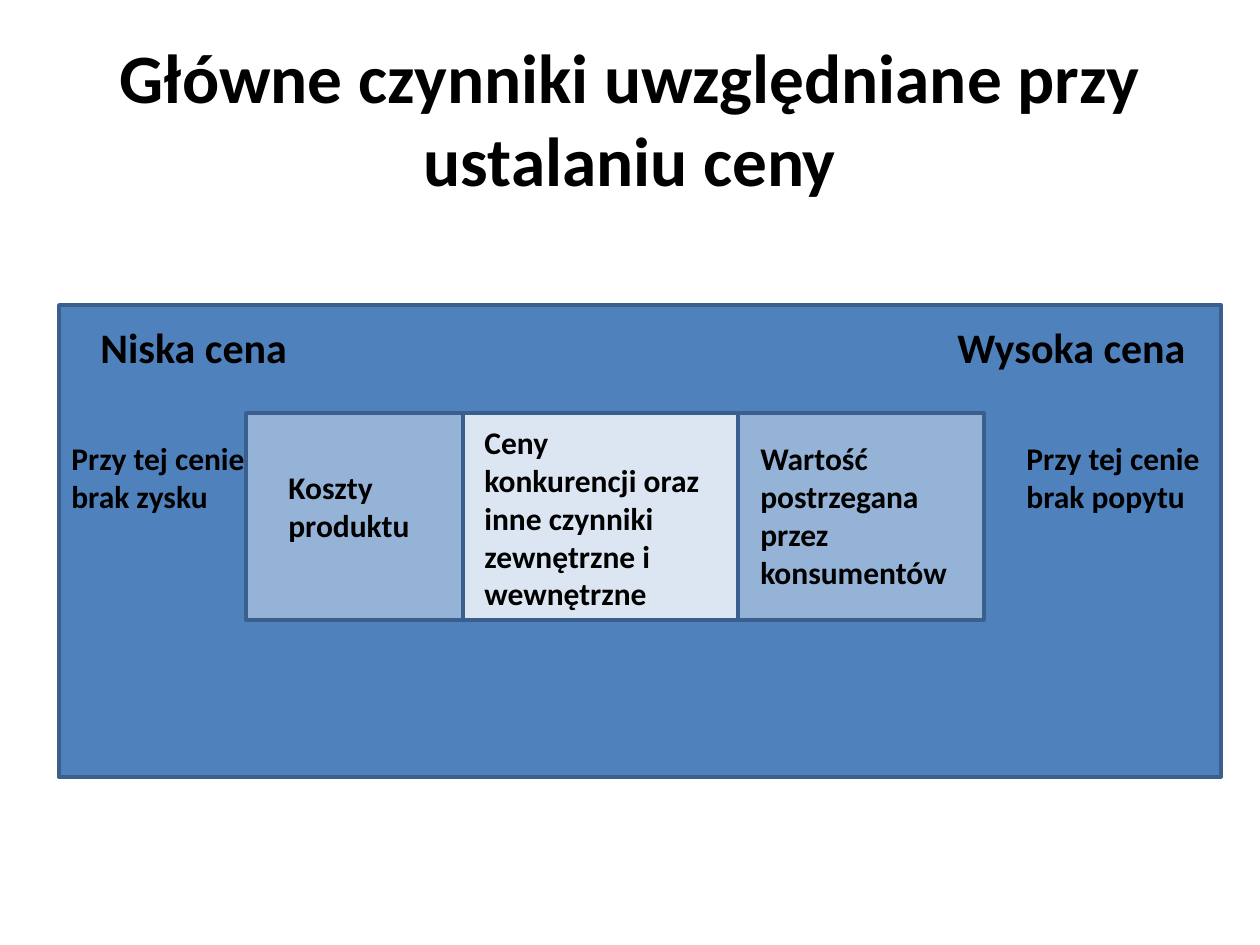
from pptx import Presentation
from pptx.dml.color import RGBColor
from pptx.enum.shapes import MSO_SHAPE
from pptx.enum.text import MSO_ANCHOR, PP_ALIGN
from pptx.util import Emu, Pt

RECT = MSO_SHAPE.RECTANGLE
TOP, MIDDLE = MSO_ANCHOR.TOP, MSO_ANCHOR.MIDDLE
LEFT, CENTER = PP_ALIGN.LEFT, PP_ALIGN.CENTER
PX = 914400 // 126

TITLE = "Główne czynniki uwzględniane przy ustalaniu ceny"
PANEL = (59, 305, 1162, 472)
BAND_LEFT, BAND_TOP, BAND_HEIGHT = 246, 413, 207

# width, fill
ZONES = [(217, "95B3D7"), (275, "DCE6F2"), (246, "95B3D7")]

# text, size, (left, top, width, height)
LABELS = [
    ("Niska cena", 24, (88, 315, 246, 63)),
    ("Wysoka cena", 24, (945, 315, 276, 63)),
    ("Przy tej cenie brak zysku", 18, (59, 433, 207, 89)),
    ("Przy tej cenie brak popytu", 18, (1014, 433, 207, 89)),
    ("Koszty produktu", 18, (276, 462, 178, 89)),
    ("Ceny konkurencji oraz inne czynniki zewnętrzne i wewnętrzne", 18,
     (472, 417, 246, 204)),
    ("Wartość postrzegana przez konsumentów", 18, (748, 433, 217, 165)),
]


def color(code):
    return RGBColor.from_string(code)


def scale(box):
    return [Emu(n * PX) for n in box]


def add_rect(slide, box, fill):
    rect = slide.shapes.add_shape(RECT, *scale(box))
    rect.shadow.inherit = False
    rect.fill.solid()
    rect.fill.fore_color.rgb = color(fill)
    rect.line.color.rgb = color("3A5F8C")
    rect.line.width = Pt(2)


def add_label(slide, text, size, box, align=LEFT, anchor=TOP):
    frame = slide.shapes.add_textbox(*scale(box)).text_frame
    frame.word_wrap = True
    frame.vertical_anchor = anchor
    frame.text = text
    para = frame.paragraphs[0]
    para.alignment = align
    font = para.runs[0].font
    font.name, font.size, font.bold = "Calibri", Pt(size), True
    font.color.rgb = color("000000")


def main():
    deck = Presentation()
    deck.slide_width, deck.slide_height = scale((1260, 945))
    slide = deck.slides.add_slide(deck.slide_layouts[6])

    add_label(slide, TITLE, 39.6, (63, 38, 1134, 158), CENTER, MIDDLE)
    add_rect(slide, PANEL, "4F81BD")
    left = BAND_LEFT
    for width, fill in ZONES:
        add_rect(slide, (left, BAND_TOP, width, BAND_HEIGHT), fill)
        left += width
    for text, size, box in LABELS:
        add_label(slide, text, size, box)

    deck.save("out.pptx")


if __name__ == "__main__":
    main()
